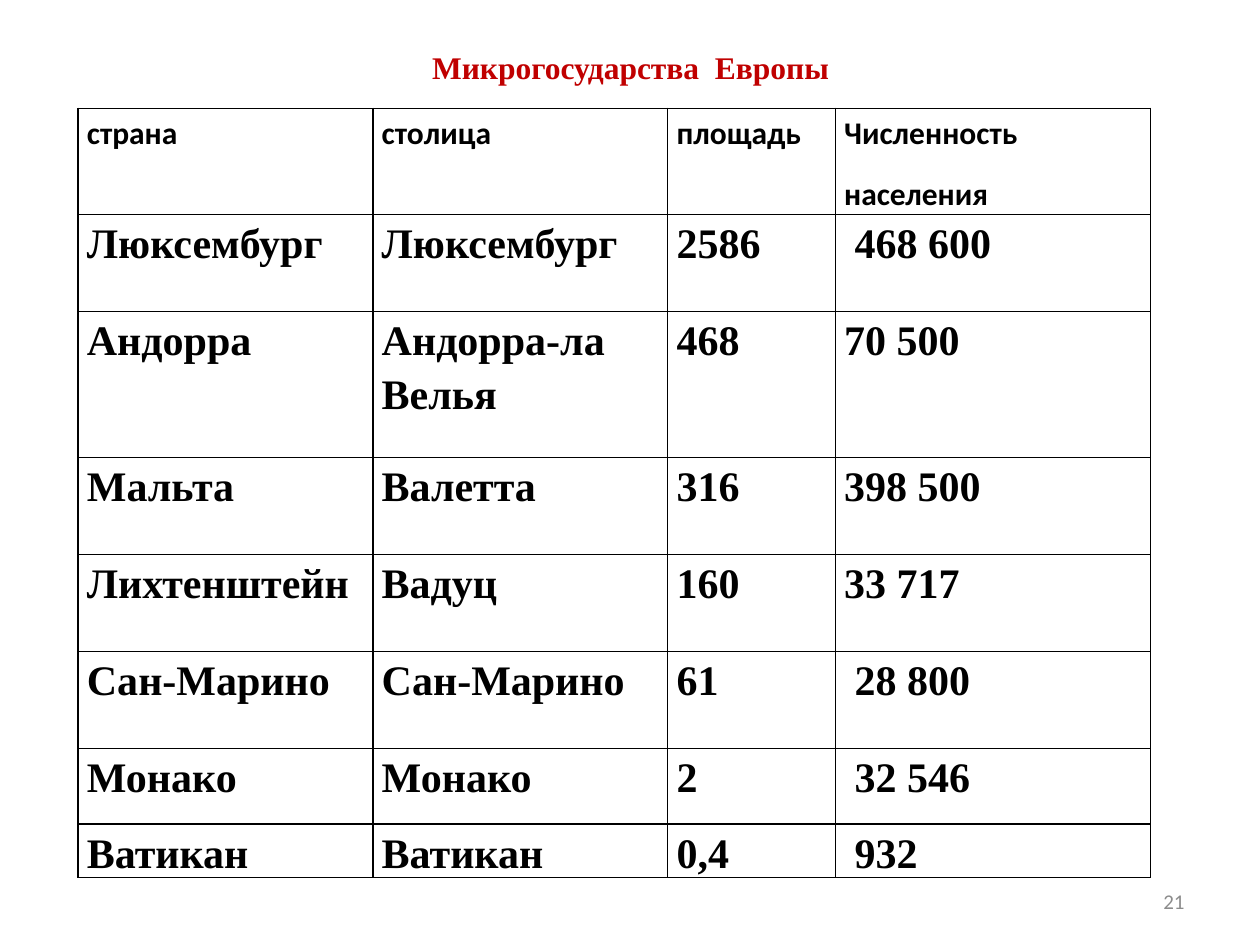
from dataclasses import dataclass

from lxml.etree import fromstring
from pptx import Presentation
from pptx.dml.color import RGBColor as RGB
from pptx.enum.text import MSO_ANCHOR as Anchor, MSO_AUTO_SIZE as Fit, PP_ALIGN as Align
from pptx.util import Inches, Pt


@dataclass(frozen=True)
class Theme:
    red: str = "C00000"
    ink: str = "000000"
    grey: str = "8C8C8C"
    serif: str = "Times New Roman"
    sans: str = "Calibri"
    head: int = 18
    body: int = 24
    note: int = 12


theme = Theme()
NS = "http://schemas.openxmlformats.org/drawingml/2006/main"


def style(part, face, size, color, bold=True):
    font = part.font
    values = {"name": face, "size": Pt(size), "bold": bold}
    for key, value in values.items():
        setattr(font, key, value)
    font.color.rgb = RGB.from_string(color)


def border(cell):
    """Draw a thin line on all four sides of the cell."""
    props = cell._tc.get_or_add_tcPr()
    for place, side in enumerate("LRTB"):
        line = fromstring(
            f'<a:ln{side} xmlns:a="{NS}" w="{Pt(1)}"><a:solidFill>'
            f'<a:srgbClr val="{theme.ink}"/></a:solidFill></a:ln{side}>')
        props.insert(place, line)


deck = Presentation()
deck.slide_width, deck.slide_height = Inches(10), Inches(7.5)
slide = deck.slides.add_slide(deck.slide_layouts[5])

# Title
title = slide.shapes.title
place = {"left": 3.28, "top": 0.31, "width": 3.45, "height": 0.71}
for key, value in place.items():
    setattr(title, key, Inches(value))
frame = title.text_frame
frame.text = "Микрогосударства  Европы"
frame.auto_size = Fit.NONE
frame.vertical_anchor = Anchor.TOP
frame.margin_top = Inches(0.07)
frame.paragraphs[0].alignment = Align.CENTER
style(frame.paragraphs[0].runs[0], theme.serif, theme.head, theme.red)

# Table of states
rows = [
    ("страна", "столица", "площадь", "Численность\nнаселения"),
    ("Люксембург", "Люксембург", "2586", " 468 600"),
    ("Андорра", "Андорра-ла Велья", "468", "70 500"),
    ("Мальта", "Валетта", "316", "398 500"),
    ("Лихтенштейн", "Вадуц", "160", "33 717"),
    ("Сан-Марино", "Сан-Марино", "61", " 28 800"),
    ("Монако", "Монако", "2", " 32 546"),
    ("Ватикан", "Ватикан", "0,4", " 932"),
]
widths = [2.34, 2.34, 1.33, 2.5]
heights = [0.77, 0.77, 1.16, 0.77, 0.77, 0.77, 0.6, 0.39]
table = slide.shapes.add_table(
    len(rows), len(widths), Inches(0.62), Inches(0.86),
    Inches(sum(widths)), Inches(sum(heights))).table
table.first_row = table.horz_banding = False
for col, width in zip(table.columns, widths):
    col.width = Inches(width)
for row, height in zip(table.rows, heights):
    row.height = Inches(height)

inset = {"margin_left": 0.07, "margin_right": 0.07, "margin_top": 0, "margin_bottom": 0}
for r, row in enumerate(rows):
    face, size = (theme.serif, theme.body) if r else (theme.sans, theme.head)
    for c, text in enumerate(row):
        cell = table.cell(r, c)
        cell.text = text
        for key, value in inset.items():
            setattr(cell, key, Inches(value))
        cell.fill.background()
        border(cell)
        for para in cell.text_frame.paragraphs:
            para.line_spacing = 1.15
            para.space_after = Pt(10)
            style(para.runs[0], face, size, theme.ink)

# Slide number
box = slide.shapes.add_textbox(Inches(7.17), Inches(6.95), Inches(2.33), Inches(0.4))
frame = box.text_frame
frame.text = "21"
frame.word_wrap = True
frame.vertical_anchor = Anchor.MIDDLE
frame.paragraphs[0].alignment = Align.RIGHT
style(frame.paragraphs[0].runs[0], theme.sans, theme.note, theme.grey, bold=False)

deck.save("out.pptx")
